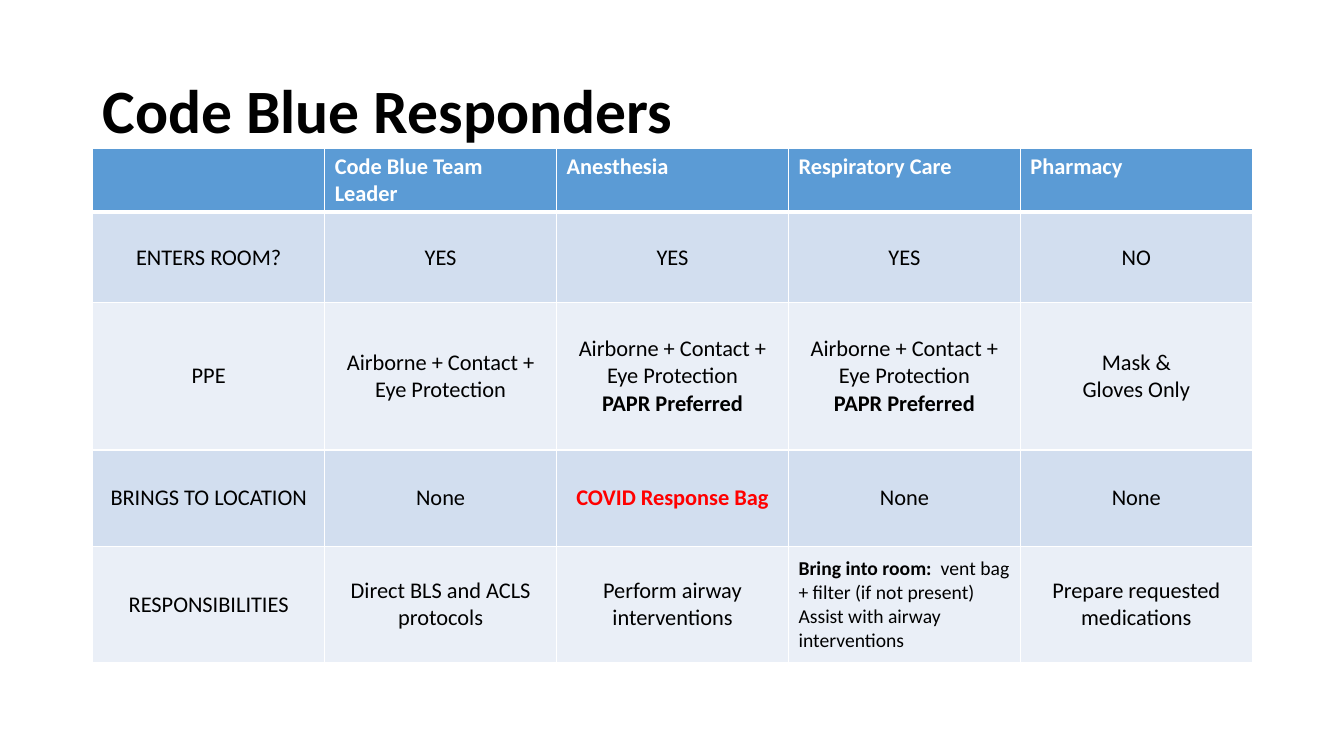
from dataclasses import dataclass

from lxml.etree import SubElement
from pptx import Presentation
from pptx.dml.color import RGBColor
from pptx.enum.text import MSO_ANCHOR, PP_ALIGN
from pptx.oxml.ns import qn
from pptx.util import Inches, Pt


@dataclass(frozen=True)
class Theme:
    font: str = "Calibri"
    black: str = "000000"
    white: str = "FFFFFF"
    red: str = "FF0000"
    head: str = "5B9BD5"
    bands: tuple = ("EAEFF7", "D2DEEF")
    title: int = 44
    body: int = 16
    small: int = 14
    line: int = 1
    rule: int = 3


THEME = Theme()
HEIGHTS = (0.62, 0.9, 1.46, 0.96, 1.15)
COLUMN = 2.3
GEAR = "Airborne + Contact + Eye Protection"
PAPR = [[GEAR], [("PAPR Preferred", {"bold": True})]]
BAG = [[("COVID Response Bag", {"bold": True, "color": THEME.red})]]
ASSIST = [
    [("Bring into room:  ", {"bold": True}), "vent bag + filter (if not present)"],
    ["Assist with airway interventions"],
]
ROWS = [
    ["", "Code Blue Team Leader", "Anesthesia", "Respiratory Care", "Pharmacy"],
    ["ENTERS ROOM?", "YES", "YES", "YES", "NO"],
    ["PPE", GEAR, PAPR, PAPR, [["Mask &"], ["Gloves Only"]]],
    ["BRINGS TO LOCATION", "None", BAG, "None", "None"],
    ["RESPONSIBILITIES", "Direct BLS and ACLS protocols",
     "Perform airway interventions", ASSIST, "Prepare requested medications"],
]


def write(frame, text, *, size=THEME.body, color=THEME.black, bold=False,
          align=PP_ALIGN.LEFT, spacing=None):
    """Write a string, or paragraphs made of strings and (string, format) pairs."""
    lines = [[text]] if isinstance(text, str) else text
    for index, line in enumerate(lines):
        para = frame.paragraphs[0] if index == 0 else frame.add_paragraph()
        para.alignment = align
        para.line_spacing = spacing
        for part in line:
            words, style = (part, {}) if isinstance(part, str) else part
            run = para.add_run()
            run.text = words
            run.font.name = THEME.font
            run.font.size = Pt(size)
            run.font.bold = style.get("bold", bold)
            run.font.color.rgb = RGBColor.from_string(style.get("color", color))


def border(cell, top, bottom):
    """Give a cell white edges; top and bottom are widths in points."""
    props = cell._tc.get_or_add_tcPr()
    widths = {"lnL": THEME.line, "lnR": THEME.line, "lnT": top, "lnB": bottom}
    for side, width in widths.items():
        edge = SubElement(props, qn(f"a:{side}"), w=str(Pt(width)))
        fill = SubElement(edge, qn("a:solidFill"))
        SubElement(fill, qn("a:srgbClr"), val=THEME.white)


def paint(cell, color):
    cell.fill.solid()
    cell.fill.fore_color.rgb = RGBColor.from_string(color)


def add_title(slide, text):
    box = slide.shapes.add_textbox(Inches(0.92), Inches(0.4), Inches(11.5), Inches(1.45))
    frame = box.text_frame
    frame.word_wrap = True
    frame.vertical_anchor = MSO_ANCHOR.MIDDLE
    write(frame, text, size=THEME.title, bold=True, spacing=0.9)


def fill_cell(cell, text, row):
    border(cell, THEME.rule if row == 1 else THEME.line,
           THEME.rule if row == 0 else THEME.line)
    if row == 0:
        paint(cell, THEME.head)
        write(cell.text_frame, text, color=THEME.white, bold=True)
        return
    paint(cell, THEME.bands[row % 2])
    cell.vertical_anchor = MSO_ANCHOR.MIDDLE
    if text is ASSIST:
        write(cell.text_frame, text, size=THEME.small)
    else:
        write(cell.text_frame, text, align=PP_ALIGN.CENTER)


def add_grid(slide, rows):
    count = len(rows[0])
    table = slide.shapes.add_table(
        len(rows), count, Inches(0.92), Inches(1.47),
        Inches(COLUMN * count), Inches(sum(HEIGHTS))).table
    for column in table.columns:
        column.width = Inches(COLUMN)
    for row, texts in enumerate(rows):
        table.rows[row].height = Inches(HEIGHTS[row])
        for column, text in enumerate(texts):
            fill_cell(table.cell(row, column), text, row)


def main():
    deck = Presentation()
    deck.slide_width, deck.slide_height = Inches(13.33), Inches(7.5)
    slide = deck.slides.add_slide(deck.slide_layouts[6])
    add_title(slide, "Code Blue Responders")
    add_grid(slide, ROWS)
    deck.save("out.pptx")


if __name__ == "__main__":
    main()
